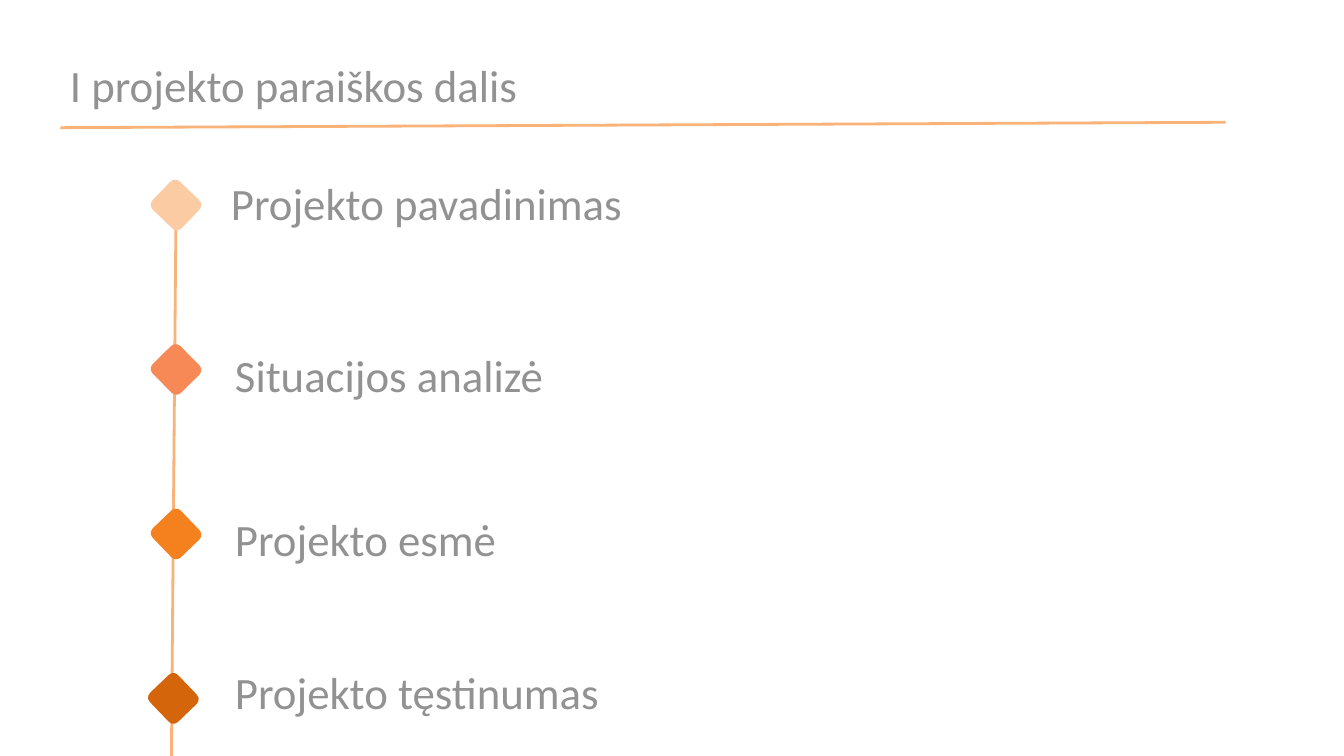
from lxml.etree import SubElement
from pptx import Presentation
from pptx.dml.color import RGBColor
from pptx.enum.shapes import MSO_CONNECTOR, MSO_SHAPE
from pptx.enum.text import MSO_ANCHOR, PP_ALIGN
from pptx.oxml.ns import qn
from pptx.util import Emu, Pt

PX = 9144  # 100 px to the inch
SLIDE_WIDTH = 1000
FONT = "Calibri"
TEXT_COLOR = "929292"
LINE_COLOR = "F9B277"
TEXT_WIDTH, TEXT_HEIGHT = 867, 58
MARKER_WIDTH, MARKER_HEIGHT = 30, 29

# Label, label offset (x, y), marker offset x, rotation, colour
MILESTONES = [
    ("Projekto pavadinimas", 48, 0, 2, 43.8, "FBCBA3"),
    ("Situacijos analizė", 51, 128, 2, 45.3, "F78957"),
    ("Projekto esmė", 51, 250, 2, 46.1, "F5811E"),
    ("Projekto tęstinumas", 51, 364, 0, 46.1, "D4650A"),
]
MARKER_TOP = 12
MARKER_STEP = 122.4


def px(value):
    return Emu(round(value * PX))


def color(hex_string):
    return RGBColor.from_string(hex_string)


def write_text(shape, text):
    frame = shape.text_frame
    frame.word_wrap = True
    frame.vertical_anchor = MSO_ANCHOR.TOP
    paragraph = frame.paragraphs[0]
    paragraph.alignment = PP_ALIGN.LEFT
    run = paragraph.add_run()
    run.text = text
    run.font.name = FONT
    run.font.size = Pt(24)
    run.font.color.rgb = color(TEXT_COLOR)


def add_line(slide, start_x, start_y, end_x, end_y):
    line = slide.shapes.add_connector(
        MSO_CONNECTOR.STRAIGHT, px(start_x), px(start_y), px(end_x), px(end_y))
    line.line.color.rgb = color(LINE_COLOR)
    line.line.width = Pt(1.5)
    SubElement(line._element.spPr, qn("a:effectLst"))


def add_header(slide, left, top, text):
    title = slide.shapes.title
    title.left, title.top = px(left), px(top)
    title.width, title.height = px(TEXT_WIDTH), px(TEXT_HEIGHT)
    write_text(title, text)
    # Slightly slanted rule under the title
    add_line(slide, left + 870, top + 53, left + 3, top + 57)


def add_marker(slide, left, top, rotation, fill):
    marker = slide.shapes.add_shape(
        MSO_SHAPE.ROUNDED_RECTANGLE, px(left), px(top),
        px(MARKER_WIDTH), px(MARKER_HEIGHT))
    marker.rotation = rotation
    marker.shadow.inherit = False
    marker.fill.solid()
    marker.fill.fore_color.rgb = color(fill)
    marker.line.fill.background()


def add_timeline(slide, left, top):
    # Spine, running past the lower edge of the slide
    add_line(slide, left + 17, top + 26, left + 13, top + 505)
    # Markers at equal steps with their labels
    for index, (label, label_x, label_y, marker_x, rotation, fill) in enumerate(MILESTONES):
        add_marker(slide, left + marker_x, top + MARKER_TOP + index * MARKER_STEP,
                   rotation, fill)
        box = slide.shapes.add_textbox(
            px(left + label_x), px(top + label_y), px(TEXT_WIDTH), px(TEXT_HEIGHT))
        write_text(box, label)


def main():
    presentation = Presentation()
    presentation.slide_width = px(SLIDE_WIDTH)
    presentation.slide_height = px(SLIDE_WIDTH * 9 / 16)
    slide = presentation.slides.add_slide(presentation.slide_layouts[5])
    slide.background.fill.solid()
    slide.background.fill.fore_color.rgb = color("FFFFFF")
    add_header(slide, 42, 38, "I projekto paraiškos dalis")
    add_timeline(slide, 114, 126)
    presentation.save("out.pptx")


if __name__ == "__main__":
    main()
